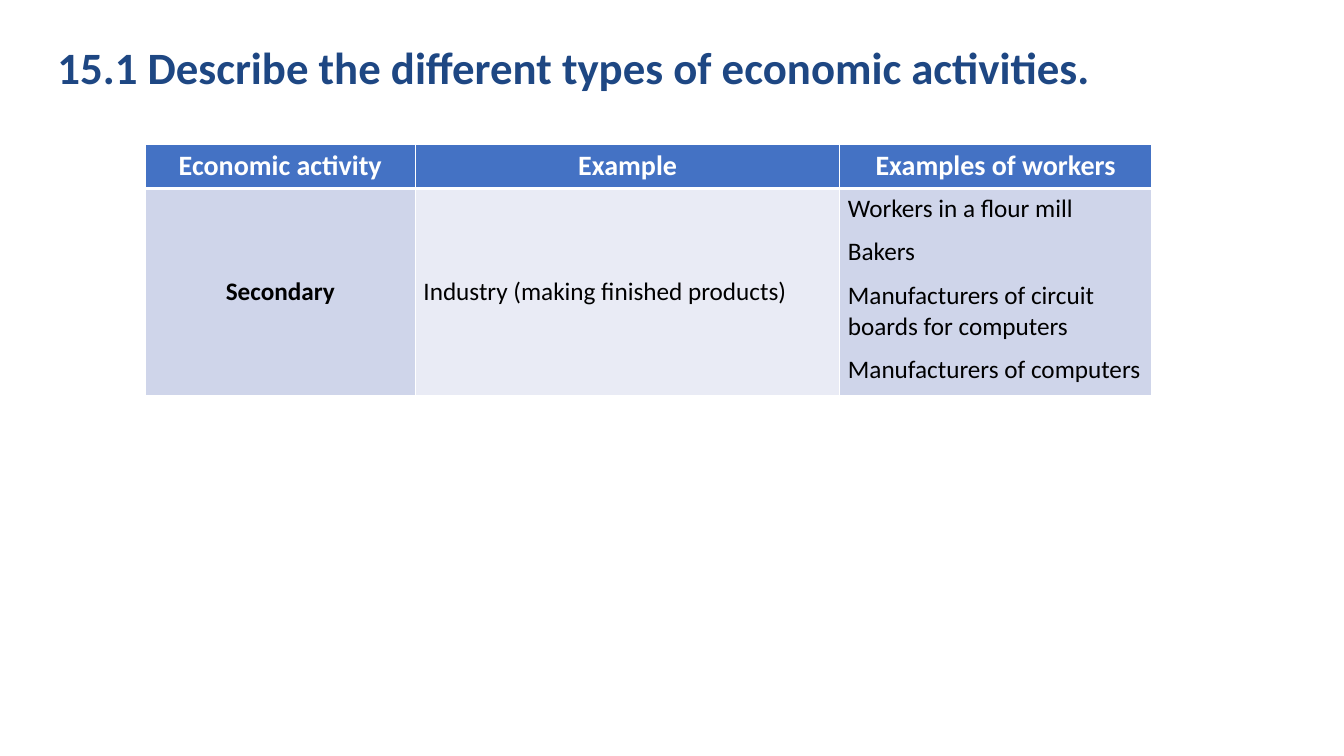
from dataclasses import dataclass

from lxml import etree
from pptx import Presentation
from pptx.dml.color import RGBColor
from pptx.enum.text import MSO_ANCHOR, PP_ALIGN
from pptx.oxml.ns import qn
from pptx.util import Inches, Pt

LEFT, CENTER = PP_ALIGN.LEFT, PP_ALIGN.CENTER
TOP, MIDDLE = MSO_ANCHOR.TOP, MSO_ANCHOR.MIDDLE
TITLE_ONLY = 5


@dataclass(frozen=True)
class Theme:
    font: str = "Calibri"
    title_color: str = "1E4783"
    header_fill: str = "4472C4"
    dark_band: str = "CFD5EA"
    light_band: str = "E9EBF5"
    white: str = "FFFFFF"
    black: str = "000000"
    title_size: int = 32
    header_size: int = 20
    body_size: int = 18


class SlideBuilder:
    def __init__(self, slide, theme):
        self.slide = slide
        self.theme = theme

    def format_paragraph(self, paragraph, size, color, bold, align):
        paragraph.alignment = align
        for run in paragraph.runs:
            run.font.name = self.theme.font
            run.font.size = Pt(size)
            run.font.bold = bold
            run.font.color.rgb = RGBColor.from_string(color)

    def title(self, text, left, top, width, height):
        shape = self.slide.shapes.title
        shape.left, shape.top = Inches(left), Inches(top)
        shape.width, shape.height = Inches(width), Inches(height)
        frame = shape.text_frame
        frame.text = text
        frame.word_wrap = True
        frame.vertical_anchor = MIDDLE
        paragraph = frame.paragraphs[0]
        paragraph.line_spacing = 0.9
        self.format_paragraph(paragraph, self.theme.title_size,
                              self.theme.title_color, True, LEFT)

    def table(self, left, top, column_widths, row_heights):
        frame = self.slide.shapes.add_table(
            len(row_heights), len(column_widths), Inches(left), Inches(top),
            Inches(sum(column_widths)), Inches(sum(row_heights)))
        table = frame.table
        table.horz_banding = False
        for column, width in zip(table.columns, column_widths):
            column.width = Inches(width)
        for row, height in zip(table.rows, row_heights):
            row.height = Inches(height)
        return table

    def cell(self, cell, lines, fill, size, color, bold=False, align=LEFT,
             anchor=TOP, bottom_border=1):
        cell.fill.solid()
        cell.fill.fore_color.rgb = RGBColor.from_string(fill)
        cell.vertical_anchor = anchor
        cell.margin_left = cell.margin_right = Inches(0.08)
        cell.margin_top = cell.margin_bottom = Inches(0.05)
        cell.text_frame.text = "\n".join(lines)
        paragraphs = cell.text_frame.paragraphs
        for paragraph in paragraphs:
            self.format_paragraph(paragraph, size, color, bold, align)
        for paragraph in paragraphs[:-1]:
            paragraph.space_after = Pt(9)
        self.borders(cell, {"lnL": 1, "lnR": 1, "lnT": 1, "lnB": bottom_border})

    def borders(self, cell, widths):
        properties = cell._tc.get_or_add_tcPr()
        for position, (side, width) in enumerate(widths.items()):
            line = etree.Element(qn(f"a:{side}"), w=str(Pt(width)))
            fill = etree.SubElement(line, qn("a:solidFill"))
            etree.SubElement(fill, qn("a:srgbClr"), val=self.theme.white)
            properties.insert(position, line)


def main():
    theme = Theme()
    presentation = Presentation()
    presentation.slide_width = Inches(13.33)
    presentation.slide_height = Inches(7.5)
    slide = presentation.slides.add_slide(presentation.slide_layouts[TITLE_ONLY])
    builder = SlideBuilder(slide, theme)

    # Title
    builder.title("15.1 Describe the different types of economic activities.",
                  0.47, 0.39, 12.32, 0.61)

    # Table header
    table = builder.table(1.44, 1.43, [2.68, 4.21, 3.09], [0.43, 2.05])
    headings = ["Economic activity", "Example", "Examples of workers"]
    for column, heading in enumerate(headings):
        builder.cell(table.cell(0, column), [heading], theme.header_fill,
                     theme.header_size, theme.white, bold=True, align=CENTER,
                     bottom_border=3)

    # Secondary activity row
    workers = ["Workers in a flour mill", "Bakers",
               "Manufacturers of circuit boards for computers",
               "Manufacturers of computers"]
    body = [
        (["Secondary"], theme.dark_band, True, CENTER, MIDDLE),
        (["Industry (making finished products)"], theme.light_band, False, LEFT, MIDDLE),
        (workers, theme.dark_band, False, LEFT, TOP),
    ]
    for column, (lines, fill, bold, align, anchor) in enumerate(body):
        cell = table.cell(1, column)
        builder.cell(cell, lines, fill, theme.body_size, theme.black,
                     bold, align, anchor)
        # The rule under the header is shared by both rows
        cell._tc.tcPr.find(qn("a:lnT")).set("w", str(Pt(3)))

    presentation.save("out.pptx")


if __name__ == "__main__":
    main()
